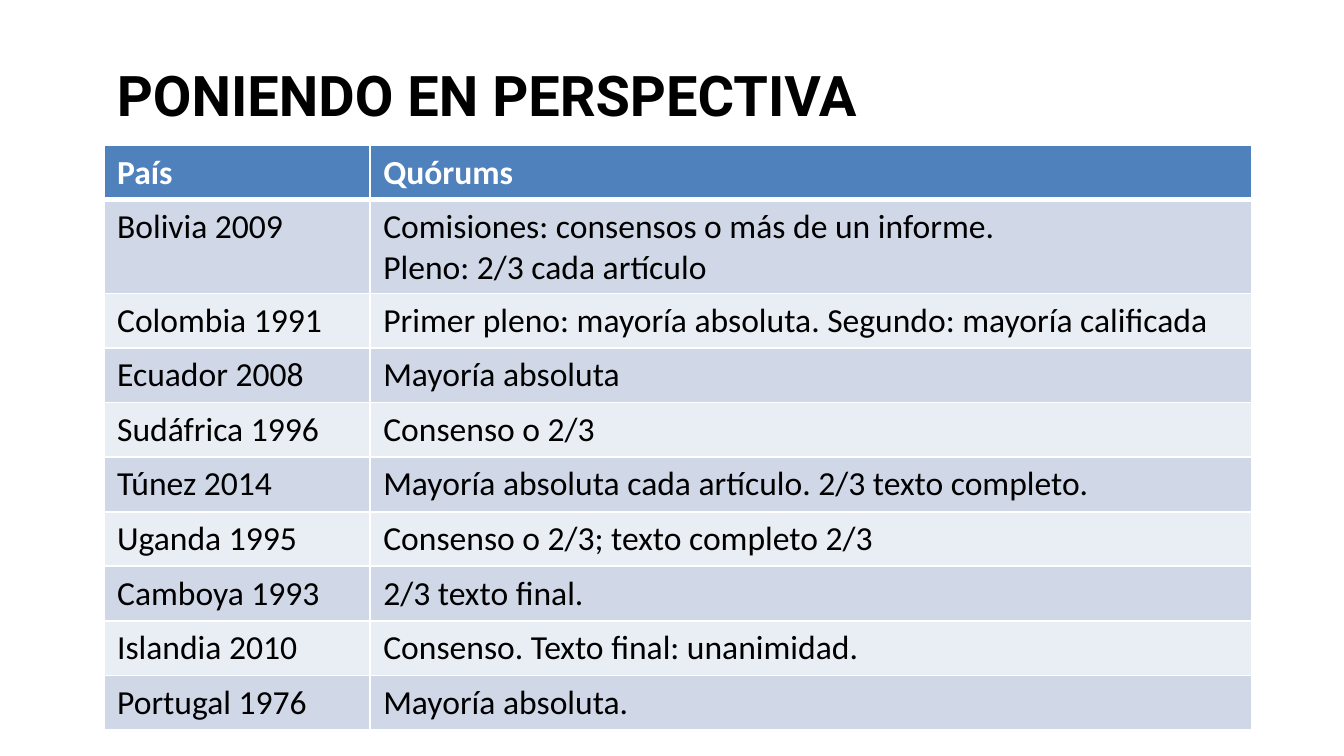
from lxml import etree
from pptx import Presentation
from pptx.dml.color import RGBColor
from pptx.enum import text as t
from pptx.oxml import ns
from pptx.util import Cm, Pt

HEADER = ("País", "Quórums")
QUORUMS = [
    ("Bolivia 2009", "Comisiones: consensos o más de un informe.\nPleno: 2/3 cada artículo"),
    ("Colombia 1991", "Primer pleno: mayoría absoluta. Segundo: mayoría calificada"),
    ("Ecuador 2008", "Mayoría absoluta"),
    ("Sudáfrica 1996", "Consenso o 2/3"),
    ("Túnez 2014", "Mayoría absoluta cada artículo. 2/3 texto completo."),
    ("Uganda 1995", "Consenso o 2/3; texto completo 2/3"),
    ("Camboya 1993", "2/3 texto final."),
    ("Islandia 2010", "Consenso. Texto final: unanimidad."),
    ("Portugal 1976", "Mayoría absoluta."),
]
BANDS = ("D0D8E8", "E9EDF4")


def color(value):
    return RGBColor.from_string(value)


def write(frame, content, size=18, face="Calibri", ink="000000", bold=False):
    frame.text = content
    for paragraph in frame.paragraphs:
        for run in paragraph.runs:
            run.font.size = Pt(size)
            run.font.name = face
            run.font.bold = bold
            run.font.color.rgb = color(ink)


def add_borders(cell, bottom=1):
    properties = cell._tc.get_or_add_tcPr()
    sides = (("lnL", 1), ("lnR", 1), ("lnT", 1), ("lnB", bottom))
    for position, (side, width) in enumerate(sides):
        border = etree.Element(ns.qn(f"a:{side}"), w=str(Pt(width)))
        fill = etree.SubElement(border, ns.qn("a:solidFill"))
        etree.SubElement(fill, ns.qn("a:srgbClr"), val="FFFFFF")
        properties.insert(position, border)


def fill_row(row, contents, background, bottom=1, **style):
    for cell, content in zip(row.cells, contents):
        cell.fill.solid()
        cell.fill.fore_color.rgb = color(background)
        add_borders(cell, bottom)
        write(cell.text_frame, content, **style)


def add_title(slide, content):
    title = slide.shapes.add_textbox(Cm(1.96), Cm(0.58), Cm(17.91), Cm(2.39))
    title.text_frame.word_wrap = True
    title.text_frame.vertical_anchor = t.MSO_ANCHOR.MIDDLE
    write(title.text_frame, content, size=30, face="Roboto", bold=True)


def add_quorum_table(slide):
    header_height, row_height = Cm(0.89), Cm(1.03)
    widths = (Cm(5.03), Cm(16.66))
    table = slide.shapes.add_table(
        len(QUORUMS) + 1, len(HEADER), Cm(1.96), Cm(2.75),
        sum(widths), header_height + row_height * len(QUORUMS)).table
    for column, width in zip(table.columns, widths):
        column.width = width

    header, *countries = table.rows
    header.height = header_height
    fill_row(header, HEADER, "4F81BD", bottom=3, ink="FFFFFF", bold=True)
    for index, (row, quorum) in enumerate(zip(countries, QUORUMS)):
        row.height = row_height
        fill_row(row, quorum, BANDS[index % 2])
    for cell in countries[0].cells:
        top = cell._tc.tcPr.find(ns.qn("a:lnT"))
        top.set("w", str(Pt(3)))


def main():
    deck = Presentation()
    deck.slide_width, deck.slide_height = Cm(25.4), Cm(14.28)
    slide = deck.slides.add_slide(deck.slide_layouts[6])
    add_title(slide, "PONIENDO EN PERSPECTIVA")
    add_quorum_table(slide)
    deck.save("out.pptx")


if __name__ == "__main__":
    main()
